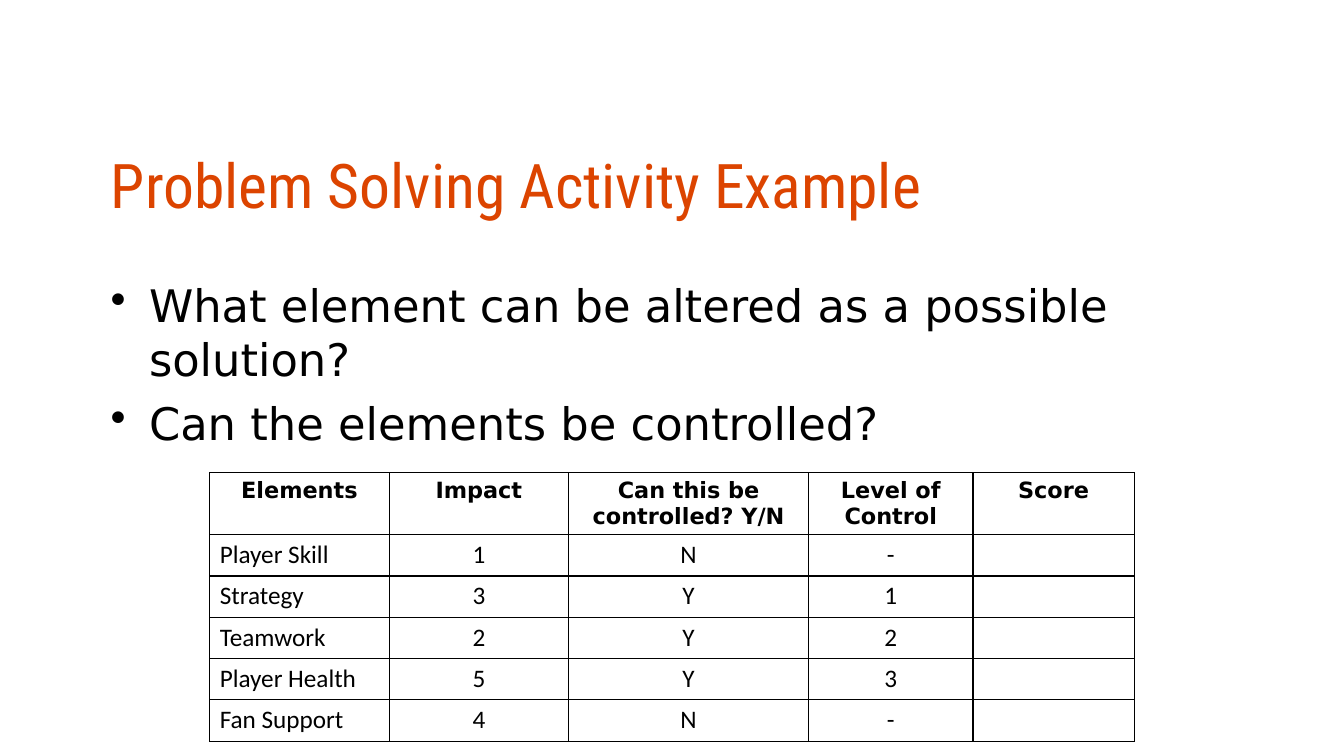
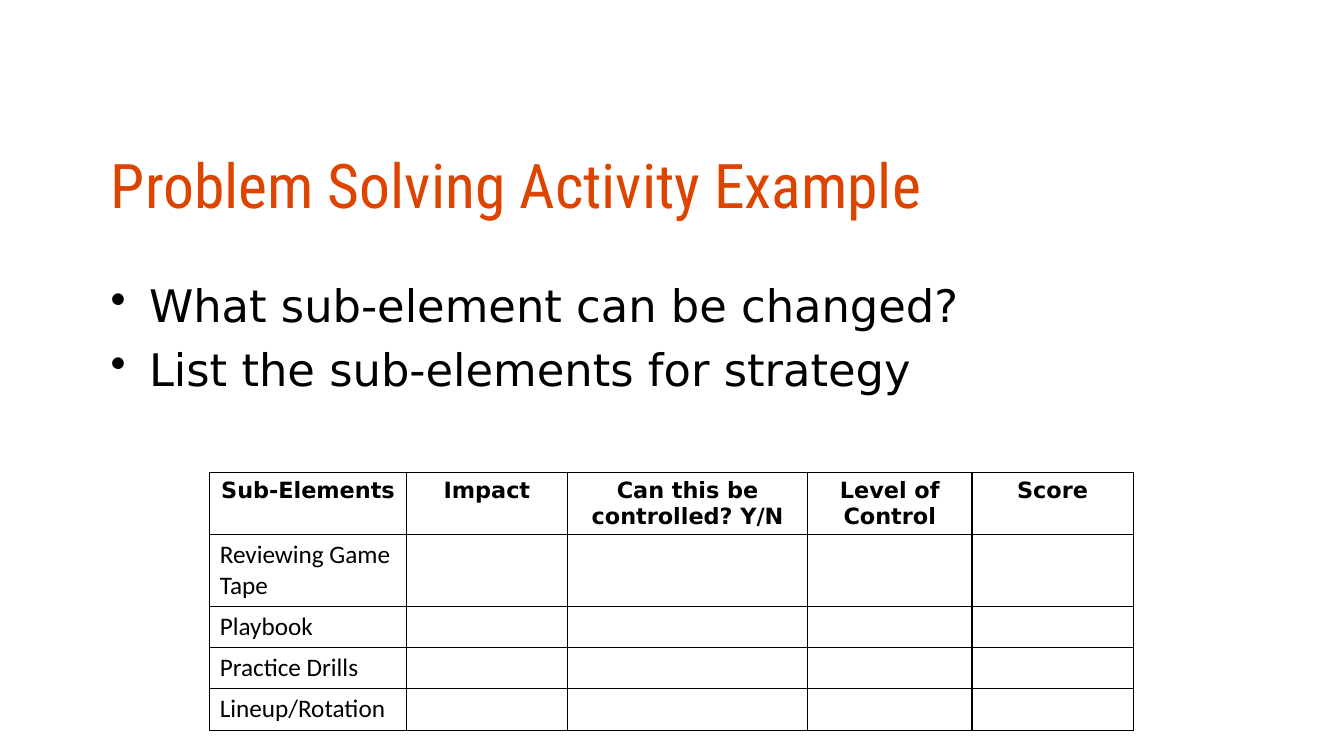
import pptx
import pptx.dml.color
import pptx.enum.text
import pptx.oxml.ns
import pptx.util
from dataclasses import dataclass
from lxml import etree

Inches, Pt = pptx.util.Inches, pptx.util.Pt
RGB = pptx.dml.color.RGBColor
Align, Anchor = pptx.enum.text.PP_ALIGN, pptx.enum.text.MSO_ANCHOR
qn = pptx.oxml.ns.qn


@dataclass(frozen=True)
class Theme:
    accent = RGB(0xDC, 0x44, 0x00)
    ink = RGB(0, 0, 0)
    title_font, title_size = "Roboto Condensed", Pt(44)
    body_font, body_size, header_size = "DejaVu Sans", Pt(32), Pt(16)
    cell_font, cell_size = "Calibri", Pt(18)
    border = Pt(1)


theme = Theme()
TITLE = "Problem Solving Activity Example"
SHARED_HEADERS = ["Impact", "Can this be controlled? Y/N", "Level of Control", "Score"]
SHARED_WIDTHS = [2.38, 1.63, 1.6]
ROW_HEIGHT = Inches(0.41)

slides = [
    {
        "bullets": ["What element can be altered as a possible solution?",
                    "Can the elements be controlled?"],
        "label": "Elements",
        "widths": [1.78, 1.78],
        "rows": [
            ["Player Skill", "1", "N", "-", ""],
            ["Strategy", "3", "Y", "1", ""],
            ["Teamwork", "2", "Y", "2", ""],
            ["Player Health", "5", "Y", "3", ""],
            ["Fan Support", "4", "N", "-", ""],
        ],
    },
    {
        "bullets": ["What sub-element can be changed?",
                    "List the sub-elements for strategy"],
        "label": "Sub-Elements",
        "widths": [1.95, 1.6],
        "rows": [[name, "", "", "", ""] for name in
                 ("Reviewing Game Tape", "Playbook", "Practice Drills", "Lineup/Rotation")],
    },
]


def set_font(p, name, size, color, bold=False):
    p.font.name, p.font.size, p.font.bold = name, size, bold
    p.font.color.rgb = color


def outline_cell(cell):
    """Clear the cell's fill and draw a solid line on its four sides."""
    tc_pr = cell._tc.get_or_add_tcPr()
    for side in ("lnL", "lnR", "lnT", "lnB"):
        ln = etree.SubElement(tc_pr, qn("a:" + side), w=str(int(theme.border)))
        fill = etree.SubElement(ln, qn("a:solidFill"))
        etree.SubElement(fill, qn("a:srgbClr"), val=str(theme.ink))
    cell.fill.background()


prs = pptx.Presentation()
prs.slide_width, prs.slide_height = Inches(13.33), Inches(7.5)

for content in slides:
    s = prs.slides.add_slide(prs.slide_layouts[5])

    title = s.shapes.title
    title.left, title.top = Inches(1), Inches(1.37)
    title.width, title.height = Inches(11.33), Inches(1.3)
    title.text = TITLE
    body = s.shapes.add_textbox(Inches(1), Inches(2.67), Inches(11.33), Inches(4.03))
    for sp in (title, body):
        tf = sp.text_frame
        tf.word_wrap = True
        tf.auto_size = pptx.enum.text.MSO_AUTO_SIZE.NONE
        tf.vertical_anchor = Anchor.TOP
        tf.margin_top = Inches(0.09)
    p = title.text_frame.paragraphs[0]
    p.alignment = Align.LEFT
    set_font(p, theme.title_font, theme.title_size, theme.accent)

    tf = body.text_frame
    tf.text = "\n".join(content["bullets"])
    for i, p in enumerate(tf.paragraphs):
        if i:
            p.space_before = Pt(7)
        p_pr = p._p.get_or_add_pPr()
        p_pr.set("marL", str(Inches(0.38)))
        p_pr.set("indent", str(Inches(-0.38)))
        etree.SubElement(p_pr, qn("a:buChar"), char="•")
        set_font(p, theme.body_font, theme.body_size, theme.ink)

    rows = [[content["label"]] + SHARED_HEADERS] + content["rows"]
    widths = [Inches(w) for w in content["widths"] + SHARED_WIDTHS]
    table = s.shapes.add_table(len(rows), len(widths), Inches(2.08), Inches(4.69),
                               sum(widths), ROW_HEIGHT * len(rows)).table
    table.first_row = table.horz_banding = False
    for column, width in zip(table.columns, widths):
        column.width = width
    for r, row in enumerate(rows):
        table.rows[r].height = ROW_HEIGHT
        for c, text in enumerate(row):
            cell = table.cell(r, c)
            cell.text = text
            outline_cell(cell)
            p = cell.text_frame.paragraphs[0]
            p.alignment = Align.LEFT if r and c == 0 else Align.CENTER
            if r == 0:
                set_font(p, theme.body_font, theme.header_size, theme.ink, bold=True)
            else:
                set_font(p, theme.cell_font, theme.cell_size, theme.ink)

prs.save("out.pptx")
